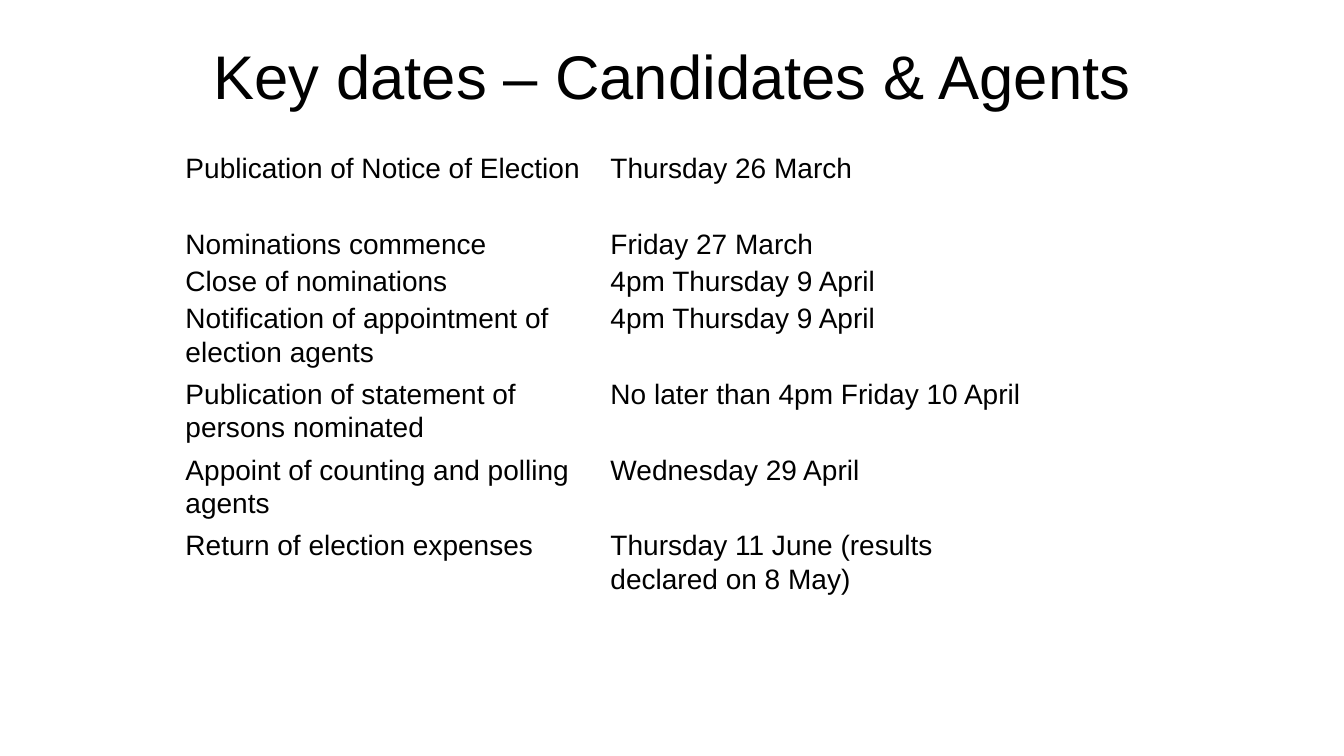
from pptx import Presentation
from pptx.dml.color import RGBColor
from pptx.enum.text import MSO_ANCHOR, PP_ALIGN
from pptx.util import Inches, Pt

DATES = [
    ("Publication of Notice of Election", "Thursday 26 March"),
    ("Nominations commence", "Friday 27 March"),
    ("Close of nominations", "4pm Thursday 9 April"),
    ("Notification of appointment of election agents", "4pm Thursday 9 April"),
    ("Publication of statement of persons nominated", "No later than 4pm Friday 10 April"),
    ("Appoint of counting and polling agents", "Wednesday 29 April"),
    ("Return of election expenses", "Thursday 11 June (results declared on 8 May)"),
]
SHORT = (1, 2)  # rows one line high


def write(frame, text, size, spacing):
    """Fill a text frame with one black Arial paragraph and return it."""
    frame.text = text
    para = frame.paragraphs[0]
    para.line_spacing = spacing
    for run in para.runs:
        run.font.name = "Arial"
        run.font.size = Pt(size)
        run.font.bold = False
        run.font.color.rgb = RGBColor.from_string("000000")
    return para


deck = Presentation()
deck.slide_width, deck.slide_height = Inches(13.33), Inches(7.5)
slide = deck.slides.add_slide(deck.slide_layouts[6])

title = slide.shapes.add_textbox(Inches(0.92), Inches(0.4), Inches(11.5), Inches(0.78))
frame = title.text_frame
frame.word_wrap = True
frame.vertical_anchor = MSO_ANCHOR.MIDDLE
write(frame, "Key dates – Candidates & Agents", 44, 0.9).alignment = PP_ALIGN.CENTER

table = slide.shapes.add_table(
    len(DATES), 2, Inches(1.77), Inches(1.5), Inches(8.43), Inches(4.5)
).table
table.first_row = table.horz_banding = False

for r, pair in enumerate(DATES):
    table.rows[r].height = Inches(0.37 if r in SHORT else 0.75)
    for c, text in enumerate(pair):
        cell = table.cell(r, c)
        cell.fill.background()
        cell.margin_left = cell.margin_right = Inches(0.07)
        cell.margin_top = cell.margin_bottom = 0
        write(cell.text_frame, text, 20, 1.07).space_after = Pt(8)

deck.save("out.pptx")
